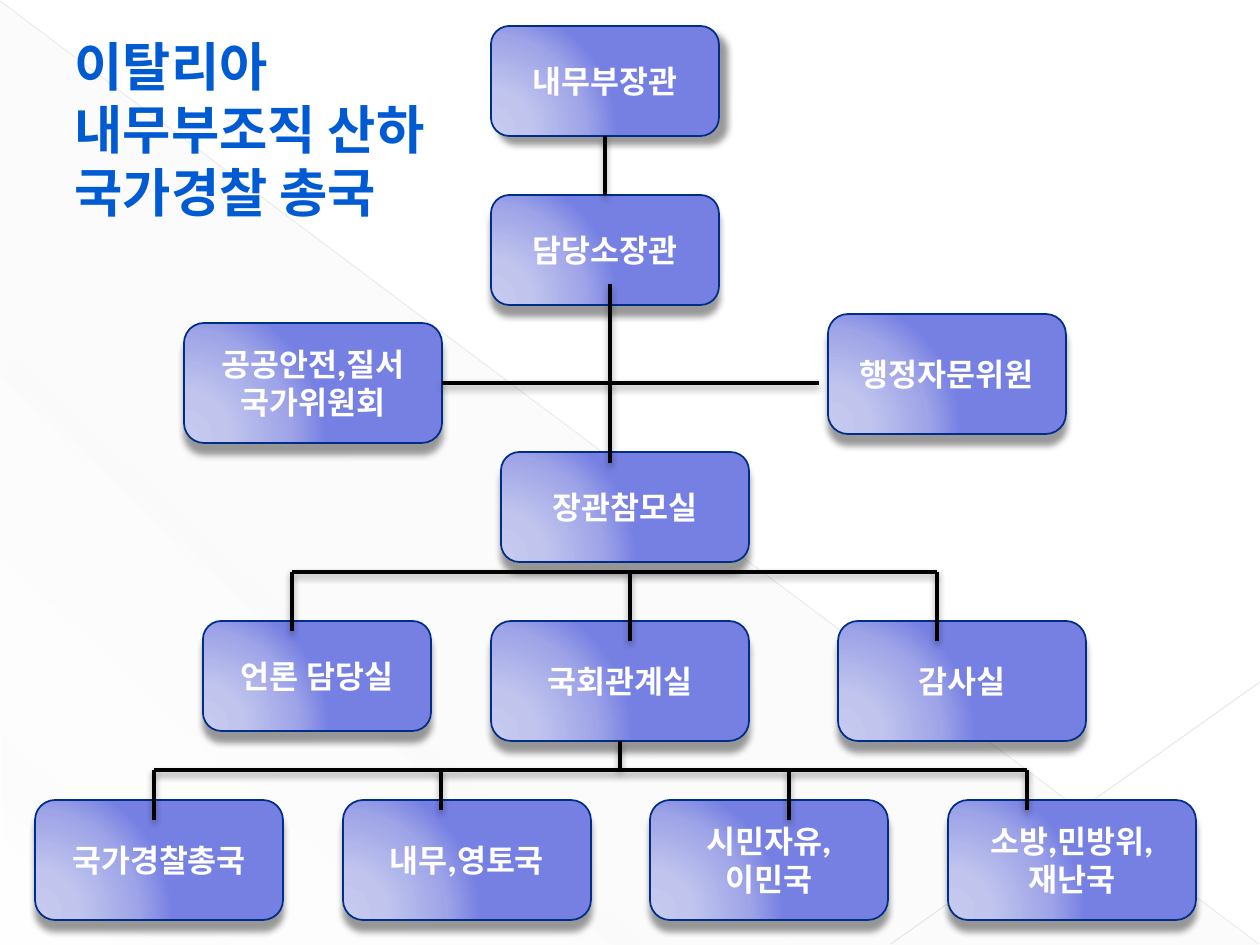
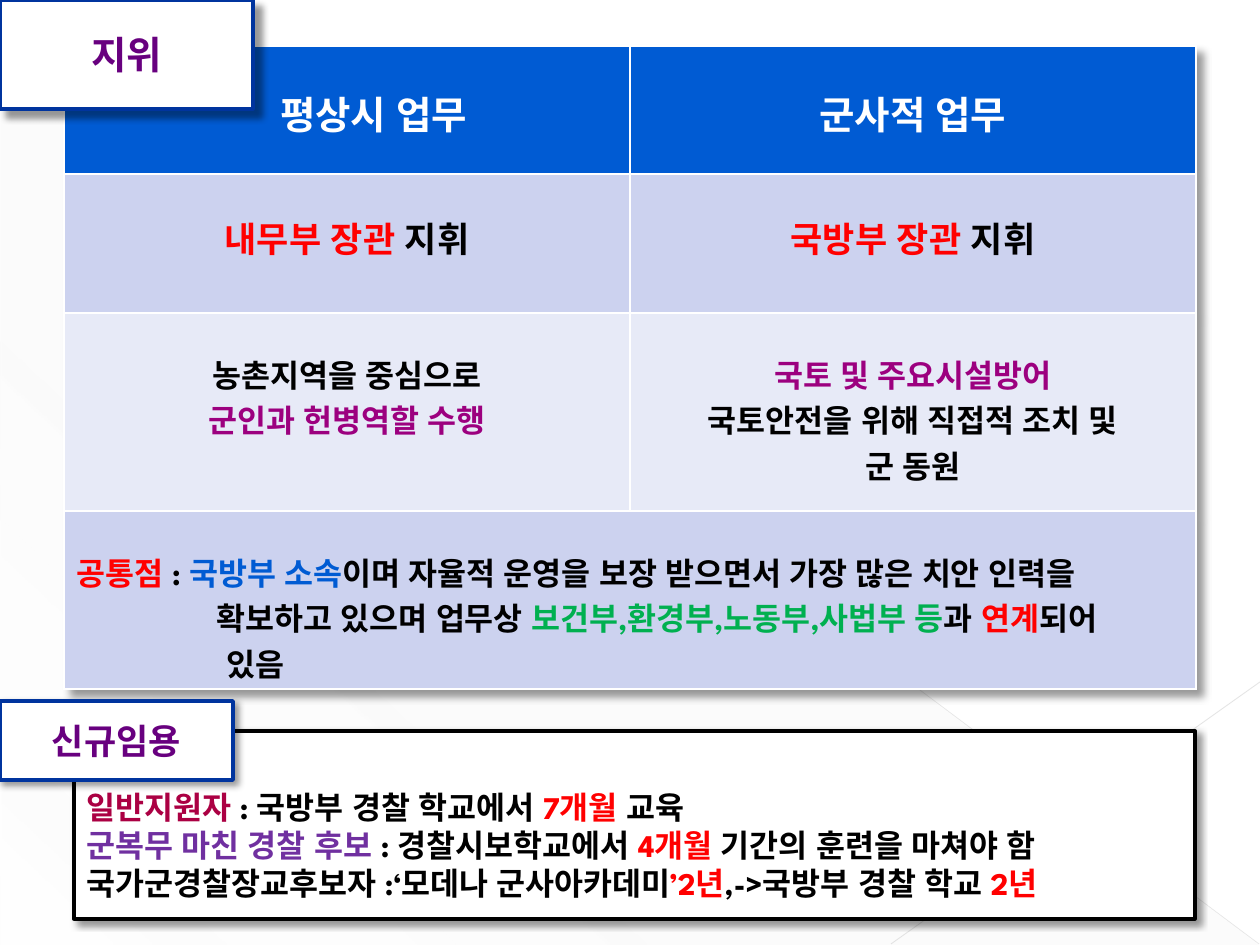
from pptx import Presentation
from pptx.dml.color import RGBColor
from pptx.enum.shapes import MSO_CONNECTOR, MSO_SHAPE
from pptx.enum.text import MSO_ANCHOR, MSO_AUTO_SIZE, PP_ALIGN
from pptx.oxml import parse_xml
from pptx.oxml.ns import nsdecls, qn
from pptx.util import Pt
from lxml.etree import SubElement

PX = 7257  # EMU in one px, 126 px to the inch
WHITE = RGBColor(0xFF, 0xFF, 0xFF)
BLACK = RGBColor(0, 0, 0)
BLUE = RGBColor(0x00, 0x5B, 0xD3)
NAVY = RGBColor(0x00, 0x2D, 0x87)
LABEL_BLUE = RGBColor(0x00, 0x34, 0x9E)
PURPLE = RGBColor(0x68, 0x00, 0x7F)
VIOLET = RGBColor(0x70, 0x30, 0xA0)
MAGENTA = RGBColor(0x9C, 0x00, 0x7F)
CRIMSON = RGBColor(0xAB, 0x00, 0x43)
RED = RGBColor(0xFF, 0, 0)
GREEN = RGBColor(0x00, 0xB0, 0x50)
BAND = RGBColor(0xCC, 0xD2, 0xEF)
PALE_BAND = RGBColor(0xE7, 0xEA, 0xF7)
LATIN_FONT = "League Spartan"
KOREAN_FONT = "Noto Sans CJK KR"

HAZE_STOPS = "".join(
    f'<a:gs pos="{position}000"><a:srgbClr val="D2D2D2"><a:alpha val="{alpha}000"/></a:srgbClr></a:gs>'
    for position, alpha in ((0, 10), (70, 8), (100, 1)))
HAZE_GRADIENT = (f'<a:gradFill {nsdecls("a")} rotWithShape="1"><a:gsLst>{HAZE_STOPS}</a:gsLst>'
                 '<a:lin ang="7980000" scaled="0"/></a:gradFill>')
BOX_STOPS = "".join(
    f'<a:gs pos="{position}000"><a:srgbClr val="{colour}"/></a:gs>'
    for position, colour in ((0, "C7CAF0"), (30, "C1C5EE"), (75, "9EA4E7"), (100, "7680E3")))
BOX_GRADIENT = (f'<a:gradFill {nsdecls("a")} rotWithShape="1"><a:gsLst>{BOX_STOPS}</a:gsLst>'
                '<a:path path="circle"><a:fillToRect l="5000" t="100000" r="120000" b="10000"/>'
                '</a:path></a:gradFill>')


def write(frame, paragraphs, size, leading, align=PP_ALIGN.CENTER, font_name=LATIN_FONT):
    """Fill a text frame with paragraphs, each a list of (text, colour) runs."""
    frame.word_wrap = True
    for index, runs in enumerate(paragraphs):
        paragraph = frame.paragraphs[0] if index == 0 else frame.add_paragraph()
        for name, value in {"alignment": align, "line_spacing": Pt(leading),
                            "space_before": Pt(0)}.items():
            setattr(paragraph, name, value)
        for text, colour in runs:
            run = paragraph.add_run()
            run.text = text
            for name, value in {"size": Pt(size), "bold": True, "name": font_name}.items():
                setattr(run.font, name, value)
            run.font.color.rgb = colour
            SubElement(run.font._element, qn("a:ea")).set("typeface", font_name)


def shadow_effect(distance, angle):
    return parse_xml(
        f'<a:effectLst {nsdecls("a")}><a:outerShdw blurRad="{Pt(4)}" dist="{Pt(distance)}" '
        f'dir="{angle * 60000}" algn="tl" rotWithShape="0"><a:srgbClr val="000000">'
        '<a:alpha val="40000"/></a:srgbClr></a:outerShdw></a:effectLst>')


presentation = Presentation()
presentation.slide_width = 1260 * PX
presentation.slide_height = 945 * PX
title_only = presentation.slide_layouts[5]
chart_slide, duty_slide = [presentation.slides.add_slide(title_only) for _ in range(2)]

# Shared backdrop, moved to the slide master
first_on_master = presentation.slide_master.shapes[0].element
haze = chart_slide.shapes.add_shape(
    MSO_SHAPE.RIGHT_TRIANGLE, *(n * PX for n in (1, 2, 1258, 943)))
haze.shadow.inherit = False
haze.line.fill.background()
haze.element.spPr.find(qn("a:prstGeom")).addnext(parse_xml(HAZE_GRADIENT))
first_on_master.addprevious(haze.element)
for ends, grey, width, alpha in (((0, 1, 1259, 944), "BFBFBF", 0.39, 35),
                                 ((1260, 682, 891, 944), "C6C6C6", 0.47, 45)):
    ray = chart_slide.shapes.add_connector(MSO_CONNECTOR.STRAIGHT, *(n * PX for n in ends))
    ray.line.color.rgb = RGBColor.from_string(grey)
    ray.line.width = Pt(width)
    colour = ray.element.spPr.find(".//" + qn("a:srgbClr"))
    SubElement(colour, qn("a:alpha")).set("val", str(alpha * 1000))
    SubElement(ray.element.spPr, qn("a:effectLst"))
    first_on_master.addprevious(ray.element)

# Slide 1: organisation chart
OFFICES = [
    ("내무부장관", 491, 26, 228, 110),
    ("담당소장관", 491, 195, 228, 110),
    ("공공안전,질서 국가위원회", 184, 323, 258, 120),
    ("행정자문위원", 828, 314, 238, 120),
    ("장관참모실", 501, 452, 248, 110),
    ("언론 담당실", 203, 621, 228, 110),
    ("국회관계실", 491, 621, 258, 120),
    ("감사실", 838, 621, 248, 120),
    ("국가경찰총국", 35, 800, 248, 120),
    ("내무,영토국", 343, 800, 248, 120),
    ("시민자유,이민국", 650, 800, 238, 120),
    ("소방,민방위,재난국", 948, 800, 248, 120),
]
offices = {}
for name, *box in OFFICES:
    office = chart_slide.shapes.add_shape(MSO_SHAPE.ROUNDED_RECTANGLE, *(n * PX for n in box))
    office.line.color.rgb = NAVY
    office.line.width = Pt(1)
    properties = office.element.spPr
    properties.find(qn("a:prstGeom")).addnext(parse_xml(BOX_GRADIENT))
    properties.append(shadow_effect(6, 90 if offices else 45))
    office.text_frame.vertical_anchor = MSO_ANCHOR.MIDDLE
    write(office.text_frame, [[(name, WHITE)]], 18, 21.6)
    offices[name] = office

# Each link: ends, office joined at the start with its side, office joined at the end
links = [
    ((605, 136, 605, 195), ("내무부장관", 2), ("담당소장관", 0)),
    ((442, 383, 819, 383), ("공공안전,질서 국가위원회", 3), None),
    ((610, 284, 610, 463), None, None),
    ((620, 741, 620, 770), ("국회관계실", 2), None),
]
for rail_y, drops in ((572, ((292, 631), (630, 641), (937, 641))),
                      (770, ((154, 820), (441, 810), (789, 820), (1027, 810)))):
    links.append(((drops[0][0], rail_y, drops[-1][0], rail_y), None, None))
    links += [((x, rail_y, x, bottom), None, None) for x, bottom in drops]
for ends, start, end in links:
    link = chart_slide.shapes.add_connector(MSO_CONNECTOR.STRAIGHT, *(n * PX for n in ends))
    if start:
        link.begin_connect(offices[start[0]], start[1])
    if end:
        link.end_connect(offices[end[0]], end[1])
    link.line.color.rgb = BLACK
    link.line.width = Pt(2)
    link.element.spPr.append(shadow_effect(2, 90))

title = chart_slide.shapes.title
for name, value in {"left": 25, "top": 28, "width": 427, "height": 204}.items():
    setattr(title, name, value * PX)
title.text_frame.auto_size = MSO_AUTO_SIZE.NONE
title.text_frame.vertical_anchor = MSO_ANCHOR.TOP
write(title.text_frame, [[(line, BLUE)] for line in ("이탈리아", "내무부조직 산하", "국가경찰 총국")],
      30, 36, PP_ALIGN.LEFT, KOREAN_FONT)
title.text_frame.paragraphs[0]._p.get_or_add_pPr().set("marL", str(37 * PX))

# Slide 2: duties table
ROW_HEIGHTS = (128, 139, 198, 178)
frame = duty_slide.shapes.add_table(4, 2, *(n * PX for n in (64, 46, 1132, sum(ROW_HEIGHTS))))
table = frame.table
table.first_row = table.horz_banding = False
table._tbl.tblPr.insert(0, shadow_effect(6, 45))
for row, height in zip(table.rows, ROW_HEIGHTS):
    row.height = height * PX
table.cell(3, 0).merge(table.cell(3, 1))

ROWS = [  # fill, text size, leading, cells
    (BLUE, 22, 32, [[[("평상시 업무", WHITE)]], [[("군사적 업무", WHITE)]]]),
    (BAND, 20, 29, [[[("내무부 장관 ", RED), ("지휘", BLACK)]],
                    [[("국방부 장관 ", RED), ("지휘", BLACK)]]]),
    (PALE_BAND, 18, 26, [
        [[("농촌지역을 중심으로", BLACK)], [("군인과 헌병역할 수행", MAGENTA)]],
        [[("국토 및 주요시설방어", MAGENTA)], [("국토안전을 위해 직접적 조치 및", BLACK)],
         [("군 동원", BLACK)]]]),
    (BAND, 18, 26, [
        [[("공통점 ", RED), (": ", BLACK), ("국방부 소속", BLUE),
          ("이며 자율적 운영을 보장 받으면서 가장 많은 치안 인력을", BLACK)],
         [("확보하고 있으며 업무상 ", BLACK), ("보건부,환경부,노동부,사법부 등", GREEN),
          ("과 ", BLACK), ("연계", RED), ("되어", BLACK)],
         [("있음", BLACK)]], []]),
]
for row_index, (fill, size, leading, cells) in enumerate(ROWS):
    for column_index, paragraphs in enumerate(cells):
        cell = table.cell(row_index, column_index)
        cell.fill.solid()
        cell.fill.fore_color.rgb = fill
        cell.margin_top, cell.margin_bottom = 36 * PX, 3 * PX
        for position, side in enumerate(("lnL", "lnR", "lnT", "lnB")):
            cell._tc.tcPr.insert(position, parse_xml(
                f'<a:{side} {nsdecls("a")} w="{Pt(1)}"><a:solidFill>'
                f'<a:srgbClr val="FFFFFF"/></a:solidFill></a:{side}>'))
        write(cell.text_frame, paragraphs, size, leading,
              PP_ALIGN.LEFT if row_index == 3 else PP_ALIGN.CENTER)
table.cell(0, 0).margin_left = 66 * PX
for paragraph, indent in zip(table.cell(3, 0).text_frame.paragraphs, (0, 140, 150)):
    paragraph._p.get_or_add_pPr().set("marL", str(indent * PX))

# Slide 2: labels and recruitment panel
status = duty_slide.shapes.title
status.element.getparent().append(status.element)
panel, recruits = [duty_slide.shapes.add_shape(MSO_SHAPE.RECTANGLE, 0, 0, PX, PX) for _ in range(2)]
for shape, box, outline, distance in ((status, (0, 0, 253, 109), LABEL_BLUE, 6),
                                      (panel, (74, 731, 1121, 188), BLACK, 3),
                                      (recruits, (0, 701, 233, 79), LABEL_BLUE, 3)):
    for name, value in zip(("left", "top", "width", "height"), box):
        setattr(shape, name, value * PX)
    shape.fill.solid()
    shape.fill.fore_color.rgb = WHITE
    shape.line.color.rgb = outline
    shape.line.width = Pt(2)
    shape.element.spPr.append(shadow_effect(distance, 45))
    shape.text_frame.vertical_anchor = MSO_ANCHOR.MIDDLE
status.text_frame.auto_size = MSO_AUTO_SIZE.NONE
write(status.text_frame, [[("지위", PURPLE)]], 22, 26.4)
write(recruits.text_frame, [[("신규임용", PURPLE)]], 20, 24)
panel.text_frame.margin_top = 46 * PX
write(panel.text_frame, [
    [("일반지원자 ", CRIMSON), (": 국방부 경찰 학교에서 ", BLACK), ("7개월 ", RED), ("교육", BLACK)],
    [("군복무 마친 경찰 후보 ", VIOLET), (": 경찰시보학교에서 ", BLACK), ("4개월 ", RED),
     ("기간의 훈련을 마쳐야 함", BLACK)],
    [("국가군경찰장교후보자 :‘모데나 군사아카데미", BLACK), ("’2년", RED),
     (",->국방부 경찰 학교 ", BLACK), ("2년", RED)],
], 18, 21.6, PP_ALIGN.LEFT)

presentation.save("out.pptx")
